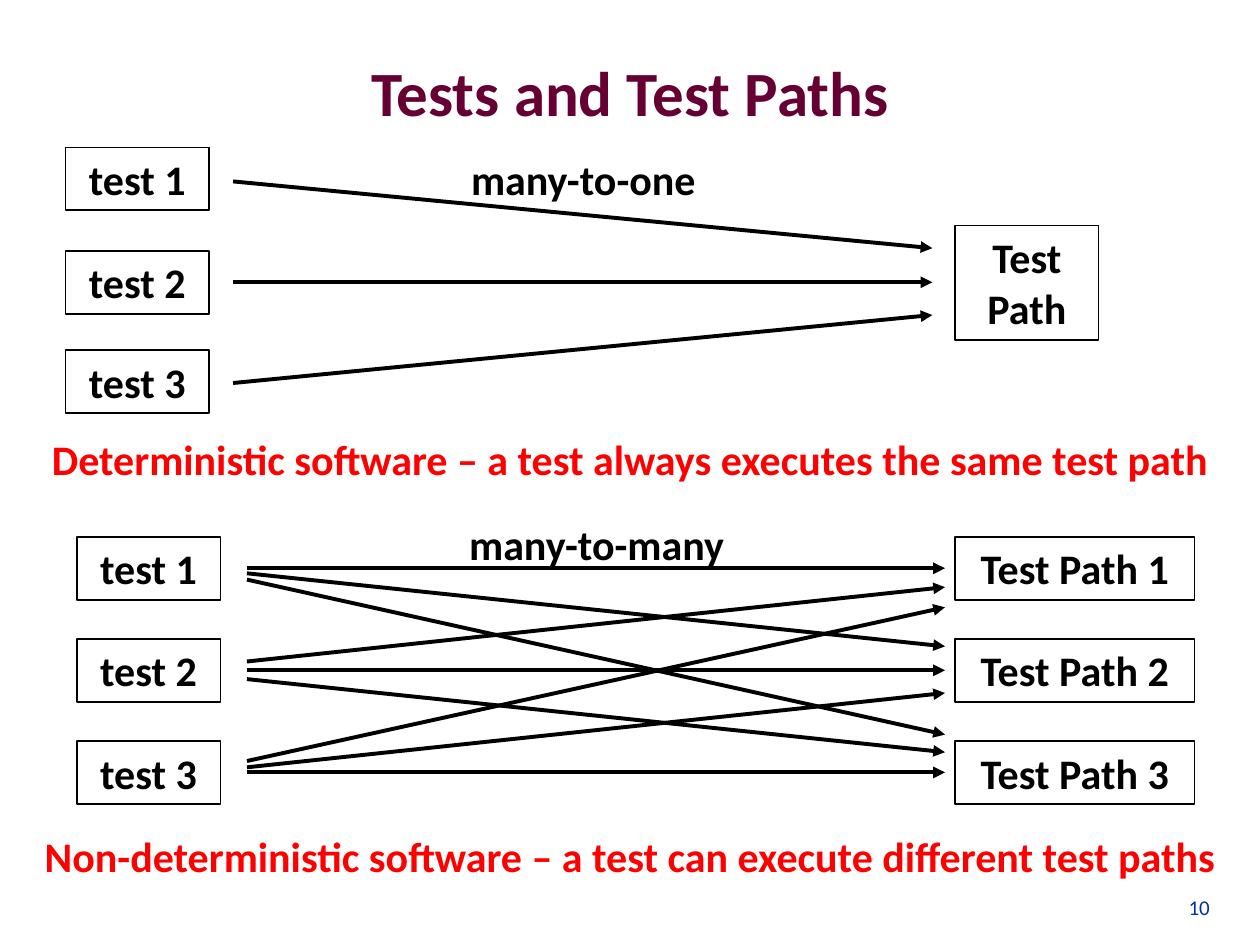
from pptx import Presentation
from pptx import util as u
from pptx.dml.color import RGBColor
from pptx.enum import shapes, text
from pptx.oxml.ns import qn
from lxml import etree

PLUM = RGBColor(0x66, 0x00, 0x33)
NAVY = RGBColor(0x00, 0x33, 0x99)
BLACK = RGBColor(0x00, 0x00, 0x00)
RED = RGBColor(0xFF, 0x00, 0x00)

FAN_STARTS = [(4.51, 4.55, 4.6), (5.25, 5.32, 5.39), (6.04, 6.09, 6.13)]
FAN_ENDS = [(4.51, 5.13, 5.83), (4.66, 5.32, 5.97), (4.82, 5.5, 6.13)]


class SlideBuilder:
    font = "Calibri"
    body_size = 24

    def __init__(self, slide):
        self.slide = slide

    def set_text(self, shape, words, color, size=body_size, bold=True,
                 align=text.PP_ALIGN.CENTER, anchor=text.MSO_ANCHOR.TOP):
        frame = shape.text_frame
        frame.word_wrap = True
        frame.vertical_anchor = anchor
        frame.text = words
        paragraph = frame.paragraphs[0]
        paragraph.alignment = align
        paragraph.font.name = self.font
        paragraph.font.size = u.Pt(size)
        paragraph.font.bold = bold
        paragraph.font.color.rgb = color

    def title(self, words):
        heading = self.slide.shapes.title
        heading.left, heading.top = u.Inches(0.5), u.Inches(0.1)
        heading.width, heading.height = u.Inches(9), u.Inches(1.25)
        self.set_text(heading, words, PLUM, size=36, anchor=text.MSO_ANCHOR.MIDDLE)

    def label(self, words, left, top, width, height=0.5, color=BLACK, **style):
        area = map(u.Inches, (left, top, width, height))
        self.set_text(self.slide.shapes.add_textbox(*area), words, color, **style)

    def box(self, words, left, top, width=1.14, height=0.5):
        area = map(u.Inches, (left, top, width, height))
        node = self.slide.shapes.add_shape(shapes.MSO_SHAPE.RECTANGLE, *area)
        node.shadow.inherit = False
        node.fill.background()
        node.line.color.rgb = BLACK
        node.line.width = u.Pt(1)
        self.set_text(node, words, BLACK)

    def arrow(self, x1, y1, x2, y2):
        ends = map(u.Inches, (x1, y1, x2, y2))
        link = self.slide.shapes.add_connector(shapes.MSO_CONNECTOR.STRAIGHT, *ends)
        link.line.color.rgb = BLACK
        link.line.width = u.Pt(2.25)
        properties = link.element.spPr
        etree.SubElement(properties.find(qn("a:ln")), qn("a:tailEnd"), type="triangle")
        etree.SubElement(properties, qn("a:effectLst"))


def main():
    deck = Presentation()
    deck.slide_width, deck.slide_height = u.Inches(10), u.Inches(7.5)
    builder = SlideBuilder(deck.slides.add_slide(deck.slide_layouts[5]))

    builder.title("Tests and Test Paths")
    builder.label("10", 9.01, 6.83, 0.69, 0.52, NAVY, size=12, bold=False,
                  align=text.PP_ALIGN.RIGHT, anchor=text.MSO_ANCHOR.BOTTOM)

    for number, top in enumerate((1.17, 1.99, 2.78), 1):
        builder.box(f"test {number}", 0.52, top)
    builder.box("Test Path", 7.58, 1.79, height=0.91)
    builder.label("many-to-one", 3.53, 1.17, 2.2)
    for start, end in ((1.44, 1.97), (2.24, 2.24), (3.04, 2.5)):
        builder.arrow(1.85, start, 7.4, end)
    builder.label("Deterministic software – a test always executes the same test path",
                  0.14, 3.39, 9.72, color=RED)

    for number, top in enumerate((4.26, 5.07, 5.88), 1):
        builder.box(f"test {number}", 0.61, top)
        builder.box(f"Test Path {number}", 7.58, top, 1.9)
    builder.label("many-to-many", 3.5, 4.07, 2.47)
    for starts, ends in zip(FAN_STARTS, FAN_ENDS):
        for start, end in zip(starts, ends):
            builder.arrow(1.96, start, 7.5, end)
    builder.label("Non-deterministic software – a test can execute different test paths",
                  0.14, 6.54, 9.72, color=RED)

    deck.save("out.pptx")


if __name__ == "__main__":
    main()
